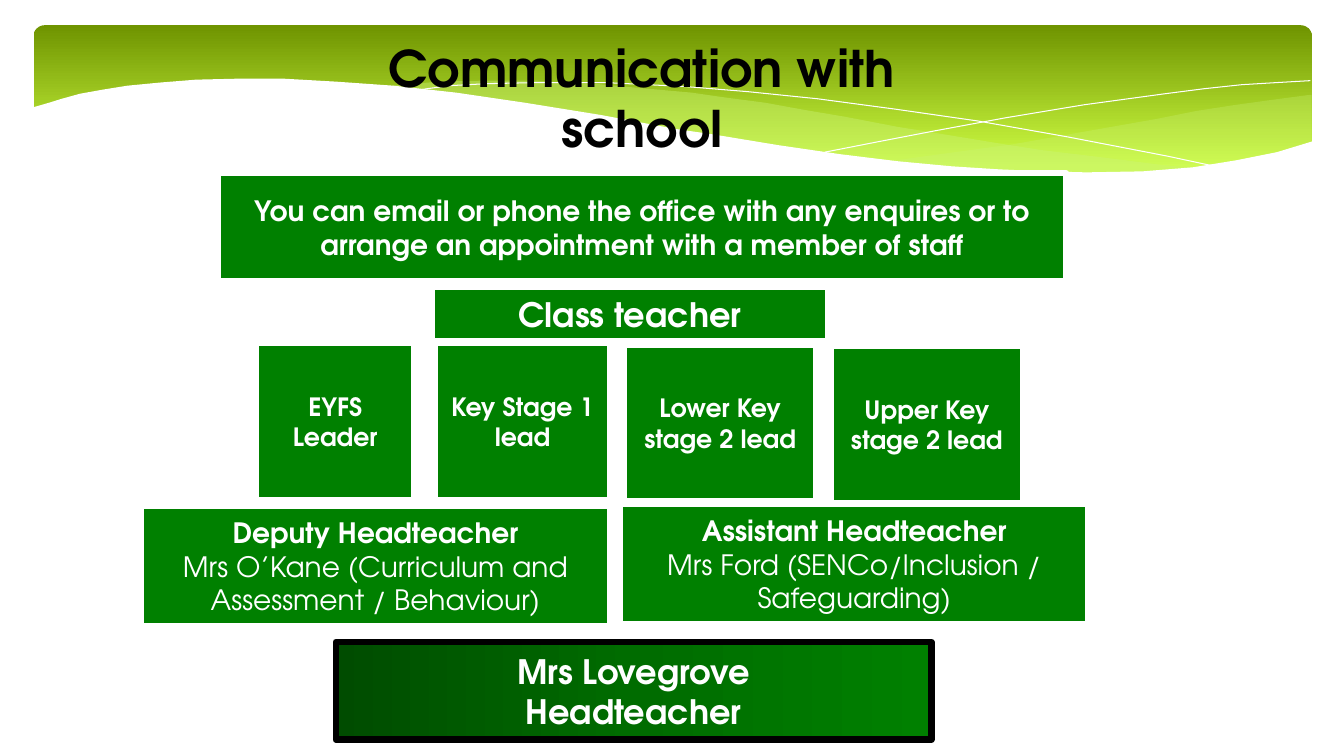
from copy import deepcopy

from pptx import Presentation
from pptx.dml.color import RGBColor
from pptx.enum.shapes import MSO_SHAPE as Shape
from pptx.enum.text import MSO_ANCHOR as Anchor, MSO_AUTO_SIZE as AutoSize, PP_ALIGN as Align
from pptx.oxml.ns import qn
from pptx.oxml.xmlchemy import OxmlElement
from pptx.util import Pt

FONT = "TeX Gyre Adventor"
BLACK = RGBColor(0x00, 0x00, 0x00)
WHITE = RGBColor(0xFF, 0xFF, 0xFF)
GREEN = RGBColor(0x00, 0x80, 0x00)
MID_GREEN = RGBColor(0x00, 0x6C, 0x00)
DARK_GREEN = RGBColor(0x00, 0x4C, 0x00)
OLIVE = RGBColor(0x6F, 0x94, 0x00)
LIME = RGBColor(0xD0, 0xFF, 0x44)
PALE_LIME = RGBColor(0xCA, 0xF2, 0x78)

# Outlines of the banner, in points
RIGHT_SWELL = [
    (936, 67.7), (909, 71.3), (883, 74.9), (855, 79.2), (826, 85), (773, 94.3), (724, 103),
    (677, 109.4), (635, 115.2), (663, 118), (690, 120.2), (715, 121.7), (738, 123.1),
    (771, 123.8), (801, 123.8), (829, 122.4), (854, 119.5), (884, 115.2), (912, 109.4),
    (937, 102.2), (937, 67.7)]
LONG_SWELL = [
    (857, 120.2), (831, 118), (804, 114.5), (774.7, 110.9), (744.5, 107.3), (712, 102.2),
    (677.5, 96.5), (641.5, 90.7), (604, 83.5), (574.5, 78.5), (546.5, 73.4), (519, 69.8),
    (494, 66.2), (469.5, 64), (446, 61.9), (424, 59.8), (403, 59), (383, 57.6), (347, 57.6),
    (315, 58.3), (287, 60.5), (275, 61.9), (310, 64.8), (348, 69.8), (388, 76.3), (431, 83.5),
    (471, 90.7), (508, 97.2), (543.5, 103), (577, 108), (609, 112.3), (639, 115.9),
    (667, 118.8), (693, 121), (718.5, 122.4), (742, 123.8), (775, 124.6), (805, 124.6),
    (832, 123.1)]
FALLING_LINE = [
    (297, 64.8), (305, 63.4), (322, 61.2), (348, 59.8), (385, 59), (432, 59), (490, 61.9),
    (534, 65.5), (584, 70.6), (638, 77.8), (698, 86.4), (763, 97.9), (834, 111.6), (871, 119.5)]
RISING_LINE = [
    (589, 108.7), (626, 101.5), (667, 93.6), (718, 84.2), (774, 74.9), (832, 67), (860, 63.4),
    (887, 60.5), (912, 59), (936, 57.6)]
WHITE_WAVE = [
    (938, 100.8), (912, 108.7), (883, 114.5), (852, 119.5), (816, 122.4), (776, 123.1),
    (747, 122.4), (714, 121), (680, 118.8), (641.5, 115.2), (600.5, 110.2), (556, 103.7),
    (508, 95.8), (483, 92.2), (429, 82.1), (375, 73.4), (326, 66.2), (281, 61.2), (240, 58.3),
    (203, 56.2), (169, 56.2), (140, 56.9), (114, 59), (91, 61.2), (73, 64.1), (57, 67),
    (44, 70.6), (35, 73.4), (22.5, 77), (22.5, 161), (938, 161)]


class SlidePainter:
    def __init__(self, slide, font):
        self.slide = slide
        self.shapes = slide.shapes
        self.font = font

    def add_text(self, frame, paragraphs, size, color):
        """Each paragraph is a (text, bold) pair."""
        frame.word_wrap = True
        for index, (text, bold) in enumerate(paragraphs):
            para = frame.paragraphs[0] if index == 0 else frame.add_paragraph()
            para.alignment = Align.CENTER
            span = para.add_run()
            span.text = text
            span.font.name = self.font
            span.font.size = Pt(size)
            span.font.bold = bold
            span.font.color.rgb = color

    def gradient(self, shape, stops, angle):
        shape.fill.gradient()
        shape.fill.gradient_angle = angle
        stop_list = shape._element.spPr.find(qn("a:gradFill")).find(qn("a:gsLst"))
        while len(stop_list) < len(stops):
            stop_list.append(deepcopy(stop_list[-1]))
        for stop, (position, color) in zip(shape.fill.gradient_stops, stops):
            stop.position = position
            stop.color.rgb = color

    def title(self, text, left, top, width, height):
        box = self.shapes.title
        self.shapes._spTree.append(box._element)  # bring in front of the banner
        box.left, box.top, box.width, box.height = map(Pt, (left, top, width, height))
        box.text_frame.auto_size = AutoSize.NONE
        box.text_frame.vertical_anchor = Anchor.MIDDLE
        self.add_text(box.text_frame, [(text, True)], 36, BLACK)

    def band(self, left, top, width, height, stops):
        band = self.shapes.add_shape(Shape.ROUNDED_RECTANGLE, *map(Pt, (left, top, width, height)))
        band.adjustments[0] = 0.07
        band.shadow.inherit = False
        band.line.fill.background()
        self.gradient(band, stops, 270)

    def outline(self, points, fill=None, opacity=100):
        """A filled outline, or an open white hairline when there is no fill."""
        corners = [(Pt(x), Pt(y)) for x, y in points]
        builder = self.shapes.build_freeform(*corners[0])
        builder.add_line_segments(corners[1:], close=fill is not None)
        shape = builder.convert_to_shape()
        shape.shadow.inherit = False
        if fill is None:
            shape.fill.background()
            shape.line.color.rgb = WHITE
            shape.line.width = Pt(0)
            return
        shape.line.fill.background()
        shape.fill.solid()
        shape.fill.fore_color.rgb = fill
        if opacity < 100:
            alpha = OxmlElement("a:alpha")
            alpha.set("val", str(opacity * 1000))
            shape._element.spPr.find(qn("a:solidFill"))[0].append(alpha)

    def box(self, left, top, width, height, size, paragraphs, border=WHITE, stops=None):
        box = self.shapes.add_shape(Shape.RECTANGLE, *map(Pt, (left, top, width, height)))
        box.shadow.inherit = False
        if stops:
            self.gradient(box, stops, 0)
        else:
            box.fill.solid()
            box.fill.fore_color.rgb = GREEN
        box.line.color.rgb = border
        box.line.width = Pt(4.5)
        box.text_frame.vertical_anchor = Anchor.MIDDLE
        self.add_text(box.text_frame, paragraphs, size, WHITE)


def main():
    deck = Presentation()
    deck.slide_width, deck.slide_height = Pt(960), Pt(540)
    page = SlidePainter(deck.slides.add_slide(deck.slide_layouts[5]), FONT)

    # Banner
    page.band(24, 18, 913, 112.5, [(0, OLIVE), (0.9, LIME)])
    page.outline(RIGHT_SWELL, PALE_LIME, 29)
    page.outline(LONG_SWELL, PALE_LIME, 40)
    page.outline(FALLING_LINE)
    page.outline(RISING_LINE)
    page.outline(WHITE_WAVE, WHITE)
    page.title("Communication with school", 226, 22.3, 465, 94.3)

    # Class teacher and phase leads
    page.box(308.2, 205.2, 283.7, 38.2, 24, [("Class teacher", True)])
    for left, top, width, lead in [
        (183, 244.8, 113, "EYFS Leader"),
        (311, 244.8, 124.6, "Key Stage 1 lead"),
        (445.7, 246, 137.5, "Lower Key stage 2 lead"),
        (593.3, 247, 137.5, "Upper Key stage 2 lead"),
    ]:
        page.box(left, top, width, 112.3, 18, [(lead, True)])

    # Senior leaders
    for left, top, role, duties in [
        (442.8, 360, "Assistant Headteacher", "Mrs Ford (SENCo/Inclusion / Safeguarding)"),
        (100.8, 361.4, "Deputy Headteacher", "Mrs O’Kane (Curriculum and Assessment / Behaviour)"),
    ]:
        page.box(left, top, 334.8, 85.7, 20, [(role, True), (duties, False)])
    page.box(239.8, 458.6, 425.5, 69.8, 24, [("Mrs Lovegrove", True), ("Headteacher", True)],
             border=BLACK, stops=[(0, DARK_GREEN), (0.5, MID_GREEN), (1, GREEN)])

    # Contact advice
    page.box(155.5, 123.8, 606.2, 77, 20, [(
        "You can email or phone the office with any enquires or to arrange "
        "an appointment with a member of staff", True)])

    deck.save("out.pptx")


if __name__ == "__main__":
    main()
